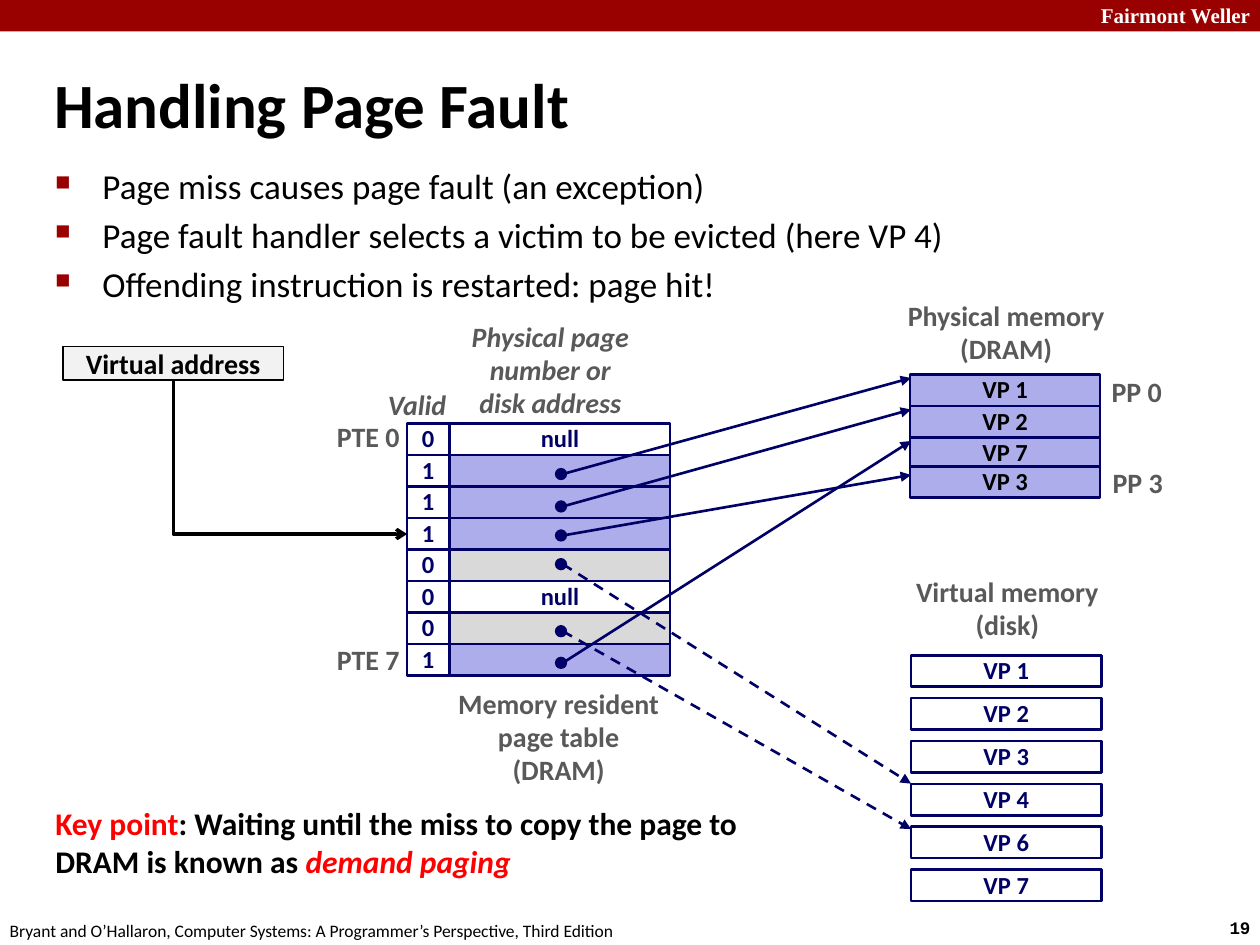
import dataclasses

import lxml.etree
import pptx
import pptx.dml.color
import pptx.enum.dml
import pptx.enum.shapes
import pptx.enum.text
import pptx.oxml.ns
import pptx.util

Pt = pptx.util.Pt
qn = pptx.oxml.ns.qn
ALIGN = pptx.enum.text.PP_ALIGN
ANCHOR = pptx.enum.text.MSO_ANCHOR
SHAPE = pptx.enum.shapes.MSO_SHAPE
CONNECTOR = pptx.enum.shapes.MSO_CONNECTOR
DASH = pptx.enum.dml.MSO_LINE.DASH


def rgb(value):
    return pptx.dml.color.RGBColor.from_string(value)


@dataclasses.dataclass(frozen=True)
class Theme:
    black: str = "000000"
    white: str = "FFFFFF"
    crimson: str = "990000"
    red: str = "FF0000"
    navy: str = "000066"
    lilac: str = "ADADEB"
    silver: str = "D9D9D9"
    pale: str = "F2F2F2"
    grey: str = "595959"
    font: str = "Calibri"
    title: int = 36
    body: int = 20
    key: int = 18
    label: int = 16
    cell: int = 14
    brand: int = 12
    footer: int = 10


class Sketch:
    """Draws styled elements on one page; every length is in points."""

    def __init__(self, page, theme):
        self.page = page
        self.theme = theme

    def fill_text(self, shape, paras, size, color, align=ALIGN.LEFT, anchor=ANCHOR.TOP,
                  wrap=False, spacing=None, after=None, **font):
        """Fill a shape; a para is a string or a list of (text, font changes)."""
        frame = shape.text_frame
        for name, value in {"word_wrap": wrap, "vertical_anchor": anchor}.items():
            setattr(frame, name, value)
        para_format = {"alignment": align, "line_spacing": spacing, "space_after": after}
        base = {"name": self.theme.font, "size": Pt(size), "color": color, **font}
        for index, spans in enumerate(paras):
            para = frame.add_paragraph() if index else frame.paragraphs[0]
            for name, value in para_format.items():
                setattr(para, name, value)
            for text, changes in [(spans, {})] if isinstance(spans, str) else spans:
                span = para.add_run()
                span.text = text
                values = {**base, **changes}
                span.font.color.rgb = rgb(values.pop("color"))
                for name, value in values.items():
                    setattr(span.font, name, value)
        return shape

    def text(self, box, paras, size, color, **style):
        shape = self.page.shapes.add_textbox(*map(Pt, box))
        return self.fill_text(shape, paras, size, color, **style)

    def label(self, box, *lines, **style):
        values = {"align": ALIGN.CENTER, "anchor": ANCHOR.MIDDLE, "spacing": 0.98, "bold": True}
        values.update(style)
        self.text(box, lines, self.theme.label, self.theme.grey, **values)

    def bullets(self, box, lines):
        shape = self.text(box, lines, self.theme.body, self.theme.black, wrap=True, after=Pt(4))
        for para in shape.text_frame.paragraphs:
            props = para._p.get_or_add_pPr()
            props.set("marL", str(Pt(27)))
            props.set("indent", str(-Pt(27)))
            tint = lxml.etree.SubElement(props, qn("a:buClr"))
            lxml.etree.SubElement(tint, qn("a:srgbClr"), val=self.theme.crimson)
            lxml.etree.SubElement(props, qn("a:buSzPct"), val="60000")
            lxml.etree.SubElement(props, qn("a:buChar"), char="■")

    def block(self, box, fill=None, line=None, width=1.5, kind=SHAPE.RECTANGLE):
        shape = self.page.shapes.add_shape(kind, *map(Pt, box))
        shape.shadow.inherit = False
        for paint, color in ((shape.fill, fill), (shape.line.fill, line)):
            if color:
                paint.solid()
                paint.fore_color.rgb = rgb(color)
            else:
                paint.background()
        if line:
            shape.line.width = Pt(width)
        return shape

    def cell(self, box, text="", fill=None, color=None):
        shape = self.block(box, fill, self.theme.navy)
        if text:
            self.fill_text(shape, [text], self.theme.cell, color or self.theme.navy, bold=True,
                           align=ALIGN.CENTER, anchor=ANCHOR.MIDDLE, spacing=0.98)

    def dot(self, x, y):
        self.block((x - 3, y - 3, 6, 6), self.theme.navy, self.theme.navy, 1, SHAPE.OVAL)

    def arrow(self, start, end, color, width=1.5, dashed=False, head="triangle",
              kind=CONNECTOR.STRAIGHT):
        line = self.page.shapes.add_connector(kind, *map(Pt, (*start, *end)))
        line.line.color.rgb = rgb(color)
        line.line.width = Pt(width)
        if dashed:
            line.line.dash_style = DASH
        props = line.element.spPr
        lxml.etree.SubElement(props.find(qn("a:ln")), qn("a:tailEnd"), type=head)
        lxml.etree.SubElement(props, qn("a:effectLst"))
        return line

    def down_then_right(self, start, end, color, width):
        """Draw a one-bend arrow: a mirrored elbow turned by 270 degrees."""
        (x1, y1), (x2, y2) = start, end
        mid_x, mid_y = (x1 + x2) / 2, (y1 + y2) / 2
        half_w, half_h = (y2 - y1) / 2, (x2 - x1) / 2
        line = self.arrow((mid_x + half_w, mid_y - half_h), (mid_x - half_w, mid_y + half_h),
                          color, width, head="arrow", kind=CONNECTOR.ELBOW)
        props = line.element.spPr
        props.find(qn("a:prstGeom")).set("prst", "bentConnector2")
        props.find(qn("a:xfrm")).set("rot", str(270 * 60000))


def draw_frame(sketch):
    theme = sketch.theme
    sketch.block((0, 0, 720, 18), theme.crimson)
    sketch.text((622, -2, 103, 21.6), ["Fairmont Weller"], theme.brand, theme.white,
                name="Times New Roman", bold=True)
    sketch.text((695.5, 520.5, 32.5, 19.5), ["19"], theme.footer, theme.black,
                name="Courier New", bold=True)
    sketch.text((-1.5, 522, 366, 19.5),
                ["Bryant and O’Hallaron, Computer Systems: A Programmer’s Perspective, Third Edition"],
                theme.footer, theme.black)
    sketch.text((23.8, 28, 652, 62), ["Handling Page Fault"], theme.title, theme.black,
                wrap=True, anchor=ANCHOR.MIDDLE, bold=True)
    sketch.bullets((24.5, 90.7, 654, 60), [
        "Page miss causes page fault (an exception)",
        "Page fault handler selects a victim to be evicted (here VP 4)",
        "Offending instruction is restarted: page hit!",
    ])
    accent = {"color": theme.red}
    sketch.text((24.5, 455.8, 456, 51), [[
        ("Key point", accent),
        (": Waiting until the miss to copy the page to DRAM is known as ", {}),
        ("demand paging", {**accent, "italic": True}),
    ]], theme.key, theme.black, wrap=True, bold=True)


def draw_memories(sketch):
    theme = sketch.theme
    left, width, height = 520, 108.7, 18
    sketch.label((511, 167.8, 128, 45), "Physical memory", "(DRAM)")
    for top, name in ((214, "VP 1"), (232, "VP 2"), (250, "VP 7"), (266.4, "VP 3")):
        sketch.cell((left, top, width, height), name, theme.lilac, theme.black)
    sketch.label((628, 211, 43, 26.6), "PP 0")
    sketch.label((628.6, 262.8, 43, 26.6), "PP 3")
    sketch.label((514.8, 325.4, 121.7, 45), "Virtual memory", "(disk)")
    for row, number in enumerate((1, 2, 3, 4, 6, 7)):
        sketch.cell((left + 0.6, 374.4 + 24.5 * row, width, height), f"VP {number}", theme.white)


def draw_page_table(sketch):
    theme = sketch.theme
    top, height = 242, 18
    entries = [(0, "null"), (1, "memory"), (1, "memory"), (1, "memory"),
               (0, "disk"), (0, "null"), (0, "disk"), (1, "memory")]
    fills = {"null": theme.white, "memory": theme.lilac, "disk": theme.silver}
    for row, (valid, content) in enumerate(entries):
        y = top + row * height
        sketch.cell((257, y, 126, height), "null" if content == "null" else "", fills[content])
        sketch.cell((232.6, y, 24, height), str(valid))
    sketch.label((214.6, 218.2, 54, 26.6), "Valid", italic=True, align=ALIGN.LEFT)
    sketch.label((262, 180, 105, 64), "Physical page", "number or", "disk address", italic=True)
    sketch.label((252.7, 389.5, 133, 64), "Memory resident", "page table", "(DRAM)")
    for y, name in ((236.9, "PTE 0"), (364.3, "PTE 7")):
        sketch.label((185, y, 50.4, 26.6), name, align=ALIGN.RIGHT)

    dot_x, page_x = 320.6, 520.6
    pointers = [(270.9, 216, False), (289.4, 234, False), (306, 271.4, False),
                (322.4, 447.8, True), (360.7, 473.8, True), (378.8, 252, False)]
    for y, target, dashed in pointers:
        sketch.arrow((dot_x + 1, y), (page_x, target), theme.navy, dashed=dashed)
        sketch.dot(dot_x, y)


def draw_address(sketch):
    theme = sketch.theme
    box = sketch.block((36, 198, 126, 19.4), theme.pale, theme.black, 1)
    sketch.fill_text(box, ["Virtual address"], theme.label, theme.black, bold=True,
                     align=ALIGN.CENTER, anchor=ANCHOR.MIDDLE)
    sketch.down_then_right((99, 217.4), (232.6, 305.2), theme.black, 2)


def main():
    deck = pptx.Presentation()
    deck.slide_width, deck.slide_height = Pt(720), Pt(540)
    sketch = Sketch(deck.slides.add_slide(deck.slide_layouts[6]), Theme())
    for draw in (draw_frame, draw_memories, draw_page_table, draw_address):
        draw(sketch)
    deck.save("out.pptx")


if __name__ == "__main__":
    main()
